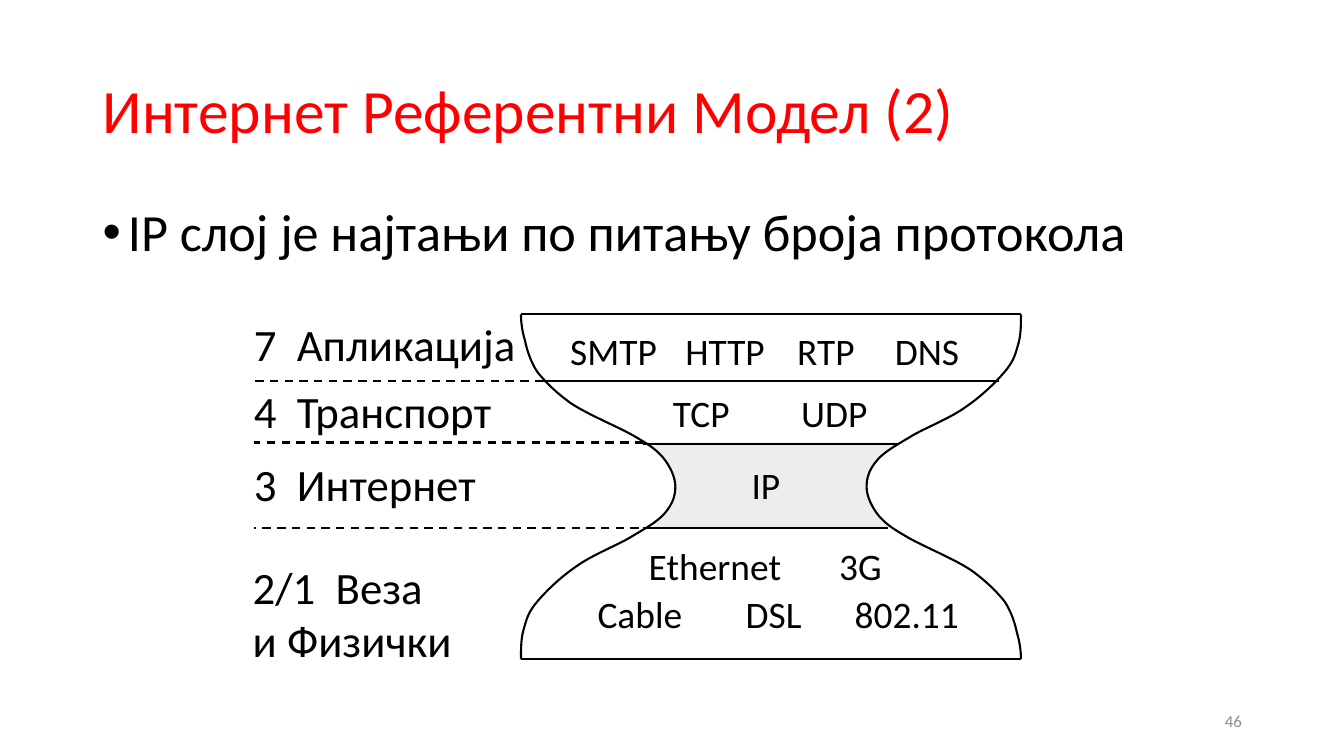
from lxml import etree
from pptx import Presentation
from pptx.dml.color import RGBColor
from pptx.enum.dml import MSO_LINE
from pptx.enum.shapes import MSO_CONNECTOR, MSO_SHAPE
from pptx.enum.text import MSO_ANCHOR, PP_ALIGN
from pptx.oxml.ns import qn
from pptx.util import Cm, Pt

DASH = MSO_LINE.DASH
STRAIGHT = MSO_CONNECTOR.STRAIGHT
RECT = MSO_SHAPE.RECTANGLE
MIDDLE, TOP = MSO_ANCHOR.MIDDLE, MSO_ANCHOR.TOP
LEFT, RIGHT = PP_ALIGN.LEFT, PP_ALIGN.RIGHT
COLORS = {"title": "FF0000", "text": "000000", "number": "8C8C8C",
          "ip": "EDEDED", "white": "FFFFFF", "line": "000000"}


def write(sp, box, lines, size, color="text", anchor=TOP, align=LEFT, wrap=True):
    sp.left, sp.top, sp.width, sp.height = [Cm(v) for v in box]
    tf = sp.text_frame
    tf.word_wrap = wrap
    tf.vertical_anchor = anchor
    for i, line in enumerate(lines):
        p = tf.add_paragraph() if i else tf.paragraphs[0]
        p.alignment = align
        r = p.add_run()
        r.text = line
        r.font.name = "Calibri"
        r.font.size = Pt(size)
        r.font.color.rgb = RGBColor.from_string(COLORS[color])
    return tf.paragraphs[0]


def style_line(sp):
    sp.line.color.rgb = RGBColor.from_string(COLORS["line"])
    sp.line.width = Pt(1.5)


prs = Presentation()
prs.slide_width, prs.slide_height = Cm(33.87), Cm(19.05)
s = prs.slides.add_slide(prs.slide_layouts[1])
shapes = s.shapes

p = write(shapes.title, (2.33, 1.02, 29.21, 3.68),
          ["Интернет Референтни Модел (2)"], 44, "title", MIDDLE)
p.line_spacing = 0.9

p = write(s.placeholders[1], (2.33, 5.08, 29.21, 12.09),
          ["IP слој је најтањи по питању броја протокола"], 37.3)
p.line_spacing = 0.9
p.space_before = Pt(10)
pPr = p._p.get_or_add_pPr()
pPr.set("marL", str(Cm(0.64)))
pPr.set("indent", str(Cm(-0.64)))
etree.SubElement(pPr, qn("a:buFont")).set("typeface", "Arial")
etree.SubElement(pPr, qn("a:buChar")).set("char", "•")

write(shapes.add_textbox(0, 0, 0, 0), (23.93, 17.65, 7.62, 1.02),
      ["46"], 12, "number", MIDDLE, RIGHT)

ip_band = shapes.add_shape(RECT, Cm(16.1), Cm(11.15), Cm(6.55), Cm(2.16))
ip_band.shadow.inherit = False
ip_band.fill.solid()
ip_band.fill.fore_color.rgb = RGBColor.from_string(COLORS["ip"])
ip_band.line.fill.background()

right_side = [
    (25.73, 7.92),
    (25.73, 8.2), (25.73, 8.48), (25.65, 8.71),
    (25.58, 8.97), (25.53, 9.12), (25.32, 9.37),
    (25.1, 9.63), (24.74, 9.98), (24.36, 10.24),
    (23.98, 10.52), (23.42, 10.74), (23.04, 10.95),
    (22.66, 11.18), (22.33, 11.35), (22.12, 11.58),
    (21.92, 11.81), (21.84, 12.01), (21.84, 12.27),
    (21.84, 12.5), (21.97, 12.78), (22.15, 13),
    (22.35, 13.23), (22.53, 13.34), (22.91, 13.56),
    (23.32, 13.79), (24.08, 14.1), (24.49, 14.38),
    (24.87, 14.66), (25.12, 14.91), (25.32, 15.16),
    (25.5, 15.44), (25.58, 15.72), (25.63, 15.95),
    (25.7, 16.18), (25.73, 16.41), (25.73, 16.61),
]
left_side = [(38.86 - x, 24.53 - y) for x, y in right_side]

for side in (right_side, left_side):
    points = [(Cm(x), Cm(y)) for x, y in side]
    builder = shapes.build_freeform(*points[0])
    builder.add_line_segments(points[1:], close=False)
    sp = builder.convert_to_shape()
    sp.shadow.inherit = False
    sp.fill.solid()
    sp.fill.fore_color.rgb = RGBColor.from_string(COLORS["white"])
    style_line(sp)
    outline = sp._element.find(".//" + qn("a:path"))
    for i, segment in enumerate(outline.findall(qn("a:lnTo"))):
        if i % 3 == 0:
            curve = etree.SubElement(outline, qn("a:cubicBezTo"))
        curve.append(segment[0])
        outline.remove(segment)

for x1, x2, y, dash in [
    (13.13, 25.73, 16.61, None),
    (13.13, 25.73, 7.92, None),
    (16.21, 22.38, 13.31, None),
    (16.21, 22.66, 11.18, None),
    (13.69, 25.17, 9.6, None),
    (6.4, 16.21, 11.15, DASH),
    (6.4, 16.1, 13.31, DASH),
    (6.4, 13.69, 9.6, DASH),
]:
    line = shapes.add_connector(STRAIGHT, Cm(x2), Cm(y), Cm(x1), Cm(y))
    style_line(line)
    if dash:
        line.line.dash_style = dash
    etree.SubElement(line._element.spPr, qn("a:effectLst"))

for box, lines in [
    ((6.15, 7.85, 7.16, 1.63), ["7  Апликација"]),
    ((6.15, 9.55, 6.55, 1.63), ["4  Транспорт"]),
    ((6.15, 11.38, 6.15, 1.63), ["3  Интернет"]),
    ((6.12, 13.97, 5.94, 3), ["2/1  Веза", "и Физички"]),
]:
    write(shapes.add_textbox(0, 0, 0, 0), box, lines, 32, wrap=len(lines) > 1)

protocol_rows = {
    8.15: [("SMTP", 14.12, 2.72), ("HTTP", 17.02, 2.54),
           ("RTP", 19.84, 1.98), ("DNS", 22.3, 2.16)],
    9.7: [("TCP", 16.71, 1.96), ("UDP", 19.94, 2.18)],
    11.53: [("IP", 18.69, 1.24)],
    13.56: [("Ethernet", 16.1, 3.86), ("3G", 20.9, 1.6)],
    14.78: [("Cable", 14.81, 2.67), ("DSL", 18.54, 1.93), ("802.11", 21.29, 3.15)],
}
for top, protocols in protocol_rows.items():
    for name, left, width in protocols:
        write(shapes.add_textbox(0, 0, 0, 0), (left, top, width, 1.4),
              [name], 26.7, wrap=False)

prs.save("out.pptx")
